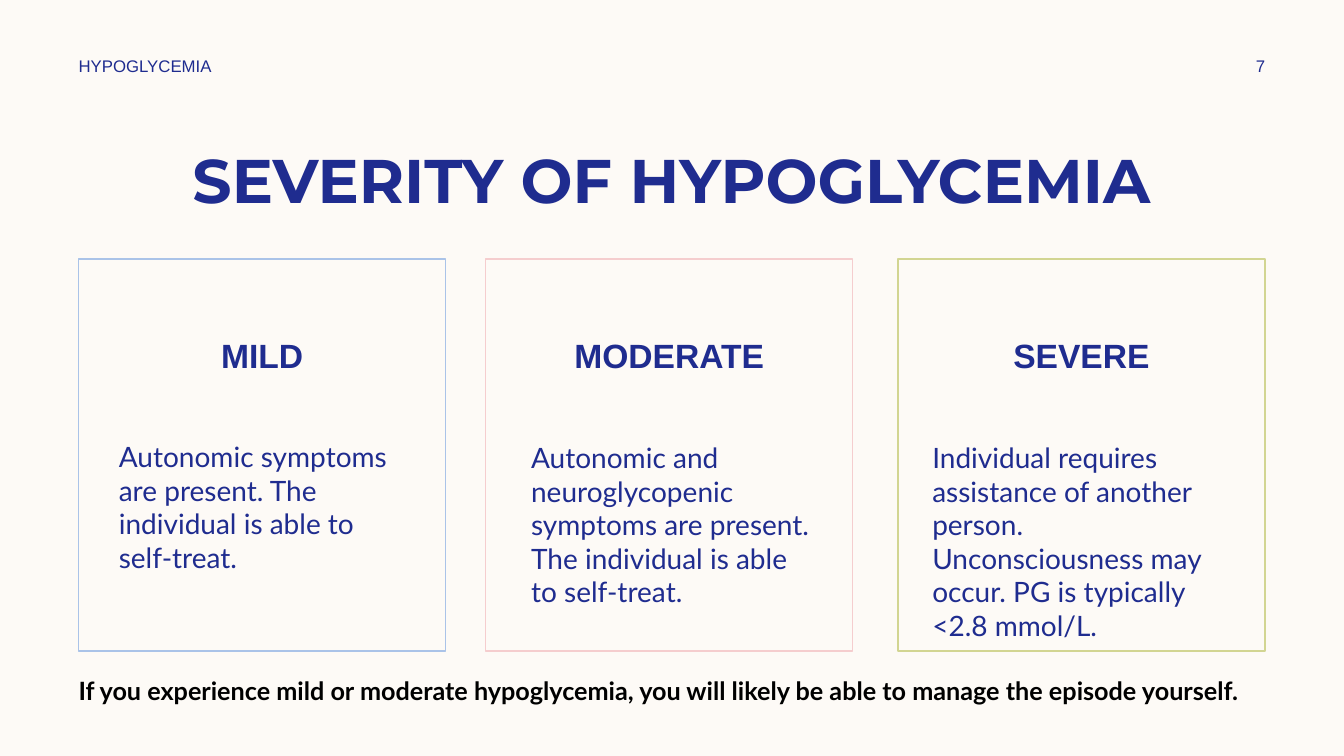
"""Builds the slide on the three degrees of severity of hypoglycemia."""
from dataclasses import dataclass

from lxml import etree
from pptx import Presentation
from pptx import util as u
from pptx.dml.color import RGBColor
from pptx.enum import shapes, text
from pptx.oxml.ns import qn


@dataclass(frozen=True)
class Theme:
    paper: str = "FDFAF6"
    navy: str = "1F2C8F"
    black: str = "000000"
    blue: str = "AAC3E8"
    pink: str = "F5CDCE"
    olive: str = "D2D592"
    display: str = "Montserrat"
    label: str = "Arial"
    reading: str = "Lato"
    title_size: int = 44
    heading_size: int = 24
    body_size: int = 20
    note_size: int = 18
    header_size: int = 12


theme = Theme()
LEFT, CENTER = text.PP_ALIGN.LEFT, text.PP_ALIGN.CENTER
TOP, MIDDLE = text.MSO_ANCHOR.TOP, text.MSO_ANCHOR.MIDDLE


def place(item, left, top, width, height):
    item.left, item.top = u.Cm(left), u.Cm(top)
    item.width, item.height = u.Cm(width), u.Cm(height)


def write(item, words, font, size, color=theme.navy, bold=False, align=LEFT, anchor=TOP):
    frame = item.text_frame
    frame.text = words
    frame.word_wrap = True
    frame.auto_size = text.MSO_AUTO_SIZE.NONE
    frame.vertical_anchor = anchor
    paragraph = frame.paragraphs[0]
    paragraph.alignment = align
    for run in paragraph.runs:
        run.font.name, run.font.size, run.font.bold = font, u.Pt(size), bold
        run.font.color.rgb = RGBColor.from_string(color)


deck = Presentation()
deck.slide_width, deck.slide_height = u.Cm(33.87), u.Cm(19.05)
slide = deck.slides.add_slide(deck.slide_layouts.get_by_name("Comparison"))
slide.background.fill.solid()
slide.background.fill.fore_color.rgb = RGBColor.from_string(theme.paper)

title, *descriptions, spare = slide.placeholders
spare.element.getparent().remove(spare.element)

place(title, 2.11, 3.43, 29.64, 2.13)
write(title, "SEVERITY OF HYPOGLYCEMIA", theme.display, theme.title_size,
      bold=True, align=CENTER, anchor=MIDDLE)

for words, left, width, align in (("HYPOGLYCEMIA", 1.73, 8.89, LEFT), ("7", 30.4, 2.74, CENTER)):
    header = slide.shapes.add_textbox(u.Cm(left), u.Cm(1.27), u.Cm(width), u.Cm(0.76))
    write(header, words, theme.label, theme.header_size, align=align, anchor=MIDDLE)

levels = (
    ("MILD", theme.blue, 1.98, 2.74, 10.95,
     "Autonomic symptoms are present. The individual is able to self-treat."),
    ("MODERATE", theme.pink, 12.24, 13.13, 10.97,
     "Autonomic and neuroglycopenic symptoms are present. The individual is able to self-treat."),
    ("SEVERE", theme.olive, 22.63, 23.24, 10.97,
     "Individual requires assistance of another person. Unconsciousness may occur. "
     "PG is typically <2.8 mmol/L."),
)
for description, level in zip(descriptions, levels):
    heading, outline, card_left, words_left, words_top, words = level
    card = slide.shapes.add_shape(shapes.MSO_SHAPE.RECTANGLE,
                                  u.Cm(card_left), u.Cm(6.53), u.Cm(9.25), u.Cm(9.88))
    card.shadow.inherit = False
    card.fill.background()
    card.line.color.rgb = RGBColor.from_string(outline)
    card.line.width = u.Pt(1)
    card.text_frame.margin_top = u.Cm(1.9)
    write(card, heading, theme.label, theme.heading_size, bold=True, align=CENTER)

    place(description, words_left, words_top, 7.7, 6.12)
    write(description, words, theme.reading, theme.body_size)
    paragraph = description.text_frame.paragraphs[0]
    paragraph.space_before = u.Pt(3.6)
    properties = paragraph._p.get_or_add_pPr()
    properties.set("marL", "0")
    properties.set("indent", "0")
    etree.SubElement(properties, qn("a:buNone"))

advice = slide.shapes.add_textbox(u.Cm(1.73), u.Cm(16.89), u.Cm(31.78), u.Cm(1.02))
write(advice, "If you experience mild or moderate hypoglycemia, you will likely be able to "
      "manage the episode yourself.", theme.reading, theme.note_size, theme.black, bold=True)

deck.save("out.pptx")
